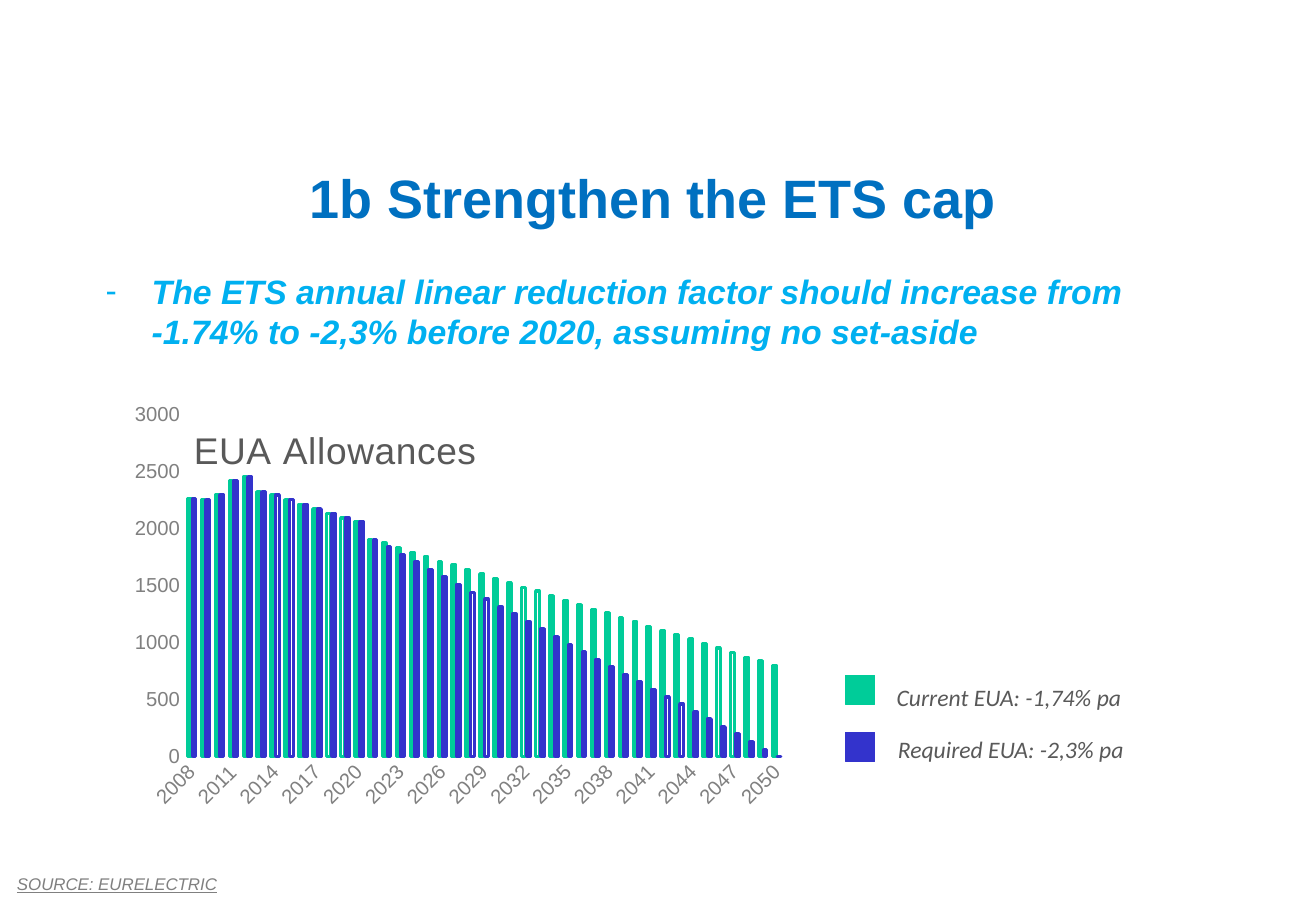
import pptx
import pptx.chart.data
import pptx.dml.color
import pptx.enum.chart
import pptx.enum.shapes
import pptx.enum.text
import pptx.oxml
import pptx.oxml.ns
import pptx.util

Inches, Pt = pptx.util.Inches, pptx.util.Pt
RGBColor = pptx.dml.color.RGBColor
PP_ALIGN = pptx.enum.text.PP_ALIGN
MSO_ANCHOR = pptx.enum.text.MSO_ANCHOR
qn = pptx.oxml.ns.qn

BLUE = RGBColor(0x00, 0x70, 0xC0)
SKY = RGBColor(0x00, 0xB0, 0xF0)
GREEN = RGBColor(0x00, 0xCC, 0x99)
INDIGO = RGBColor(0x33, 0x33, 0xCC)
GREY = RGBColor(0x80, 0x80, 0x80)
DARK = RGBColor(0x59, 0x59, 0x59)

CHART_W, CHART_H = 5.68, 3.58
YEARS = [str(year) for year in range(2008, 2051)]
SHARED = [2260, 2250, 2290, 2420, 2450, 2320, 2290, 2250, 2210, 2170, 2130,
          2090, 2060, 1900]
CURRENT = SHARED + [
    1870, 1830, 1790, 1750, 1710, 1680, 1640, 1600, 1560, 1520, 1480, 1450,
    1410, 1370, 1330, 1290, 1260, 1220, 1180, 1140, 1100, 1070, 1030, 990,
    950, 910, 870, 840, 800]
REQUIRED = SHARED + [
    1840, 1770, 1710, 1640, 1580, 1510, 1440, 1380, 1310, 1250, 1180, 1120,
    1050, 980, 920, 850, 790, 720, 660, 590, 520, 460, 390, 330, 260, 200,
    130, 60, 0]


def format_font(font, size, color, name="Arial", bold=False, italic=False,
                underline=False):
    font.size, font.name = Pt(size), name
    font.bold, font.italic, font.underline = bold, italic, underline
    font.color.rgb = color


def add_text(slide, text, x, y, w, h, size, color, align=PP_ALIGN.LEFT,
             anchor=MSO_ANCHOR.TOP, margins=(0.1, 0.05), bullet=None,
             **font):
    """Add a one-paragraph text box; margins are (sides, top and bottom)."""
    sp = slide.shapes.add_textbox(Inches(x), Inches(y), Inches(w), Inches(h))
    tf = sp.text_frame
    tf.word_wrap = True
    tf.vertical_anchor = anchor
    tf.margin_left = tf.margin_right = Inches(margins[0])
    tf.margin_top = tf.margin_bottom = Inches(margins[1])
    p = tf.paragraphs[0]
    p.alignment = align
    if bullet:
        add_bullet(p, bullet)
    r = p.add_run()
    r.text = text
    format_font(r.font, size, color, **font)


def add_bullet(p, char, indent=0.38):
    pPr = p._p.get_or_add_pPr()
    pPr.set("marL", str(Inches(indent)))
    pPr.set("indent", str(-Inches(indent)))
    for tag in ('buFont', 'typeface="Arial"'), ("buChar", f'char="{char}"'):
        pPr.append(pptx.oxml.parse_xml(
            f'<a:{tag[0]} {pptx.oxml.ns.nsdecls("a")} {tag[1]}/>'))


def add_key(slide, text, x, y, color, text_x, text_y):
    """Add one legend entry: a colour square and its label."""
    sp = slide.shapes.add_shape(pptx.enum.shapes.MSO_SHAPE.RECTANGLE,
                                Inches(x), Inches(y), Inches(0.24), Inches(0.24))
    sp.shadow.inherit = False
    sp.fill.solid()
    sp.fill.fore_color.rgb = color
    sp.line.color.rgb = color
    sp.line.width = Pt(0.75)
    add_text(slide, text, text_x, text_y, 2.68, 0.34, 14, DARK,
             name="Calibri", italic=True)


def set_layout(parent, index, **places):
    """Place a chart part; places are inches from the chart's corner."""
    old = parent.find(qn("c:layout"))
    if old is not None:
        parent.remove(old)
    target = '<c:layoutTarget val="inner"/>' if "w" in places else ""
    modes = "".join(f'<c:{k}Mode val="edge"/>' for k in places if k in "xy")
    values = "".join(
        f'<c:{k} val="{v / (CHART_W if k in "xw" else CHART_H)}"/>'
        for k, v in places.items())
    parent.insert(index, pptx.oxml.parse_xml(
        f'<c:layout {pptx.oxml.ns.nsdecls("c")}><c:manualLayout>'
        f'{target}{modes}{values}</c:manualLayout></c:layout>'))


def style_axis(axis):
    axis.has_major_gridlines = False
    axis.major_tick_mark = pptx.enum.chart.XL_TICK_MARK.NONE
    axis.minor_tick_mark = pptx.enum.chart.XL_TICK_MARK.NONE
    axis.format.line.fill.background()
    format_font(axis.tick_labels.font, 12, GREY)


def add_chart_title(chart, text):
    chart.has_title = True
    title = chart.chart_title
    p = title.text_frame.paragraphs[0]
    r = p.add_run()
    r.text = text
    format_font(r.font, 22, DARK)
    r._r.get_or_add_rPr().set("spc", "50")
    set_layout(title._element, 1, x=0.61, y=0.26)
    title._element.find(qn("c:overlay")).set("val", "1")


def add_allowance_chart(slide):
    data = pptx.chart.data.CategoryChartData(number_format="0")
    data.categories = YEARS
    data.add_series("Series 1", CURRENT)
    data.add_series("Series 2", REQUIRED)
    chart = slide.shapes.add_chart(
        pptx.enum.chart.XL_CHART_TYPE.COLUMN_CLUSTERED, Inches(0.93),
        Inches(3.2), Inches(CHART_W), Inches(CHART_H), data).chart
    chart.has_legend = False
    chart.font.size, chart.font.name = Pt(10), "Arial"
    add_chart_title(chart, "EUA Allowances")

    plot = chart.plots[0]
    plot.gap_width, plot.overlap = 164, -35
    plot.vary_by_categories = False
    for series, color in zip(plot.series, (GREEN, INDIGO)):
        series.format.fill.background()
        series.format.line.color.rgb = color
        series.format.line.width = Pt(2)
    set_layout(plot._element.getparent(), 0, x=0.59, y=0.21, w=4.93, h=2.82)

    style_axis(chart.value_axis)
    chart.value_axis.minimum_scale = 0
    chart.value_axis.maximum_scale = 3000
    chart.value_axis.major_unit = 500
    style_axis(chart.category_axis)
    cat_ax = chart.category_axis._element
    cat_ax.find(qn("c:txPr")).find(qn("a:bodyPr")).set("rot", "-2700000")
    cat_ax.find(qn("c:noMultiLvlLbl")).addprevious(pptx.oxml.parse_xml(
        f'<c:tickLblSkip {pptx.oxml.ns.nsdecls("c")} val="3"/>'))


def main():
    prs = pptx.Presentation()
    prs.slide_width, prs.slide_height = Inches(10.83), Inches(7.5)
    slide = prs.slides.add_slide(prs.slide_layouts[6])
    add_text(slide, "1b Strengthen the ETS cap", 0.77, 1.39, 9.21, 0.47, 32,
             BLUE, align=PP_ALIGN.CENTER, anchor=MSO_ANCHOR.MIDDLE, bold=True)
    add_text(slide, "The ETS annual linear reduction factor should increase "
             "from -1.74% to -2,3% before 2020, assuming no set-aside",
             0.77, 2.18, 9.21, 0.9, 20, SKY, bullet="-", bold=True, italic=True)
    add_allowance_chart(slide)
    add_key(slide, "Current EUA: -1,74% pa", 6.96, 5.56, GREEN, 7.28, 5.57)
    add_key(slide, "Required EUA: -2,3% pa", 6.96, 6.03, INDIGO, 7.29, 6)
    add_text(slide, "SOURCE: EURELECTRIC", 0.14, 7.19, 9.84, 0.17, 10, GREY,
             anchor=MSO_ANCHOR.BOTTOM, margins=(0, 0), italic=True,
             underline=True)
    prs.save("out.pptx")


if __name__ == "__main__":
    main()
